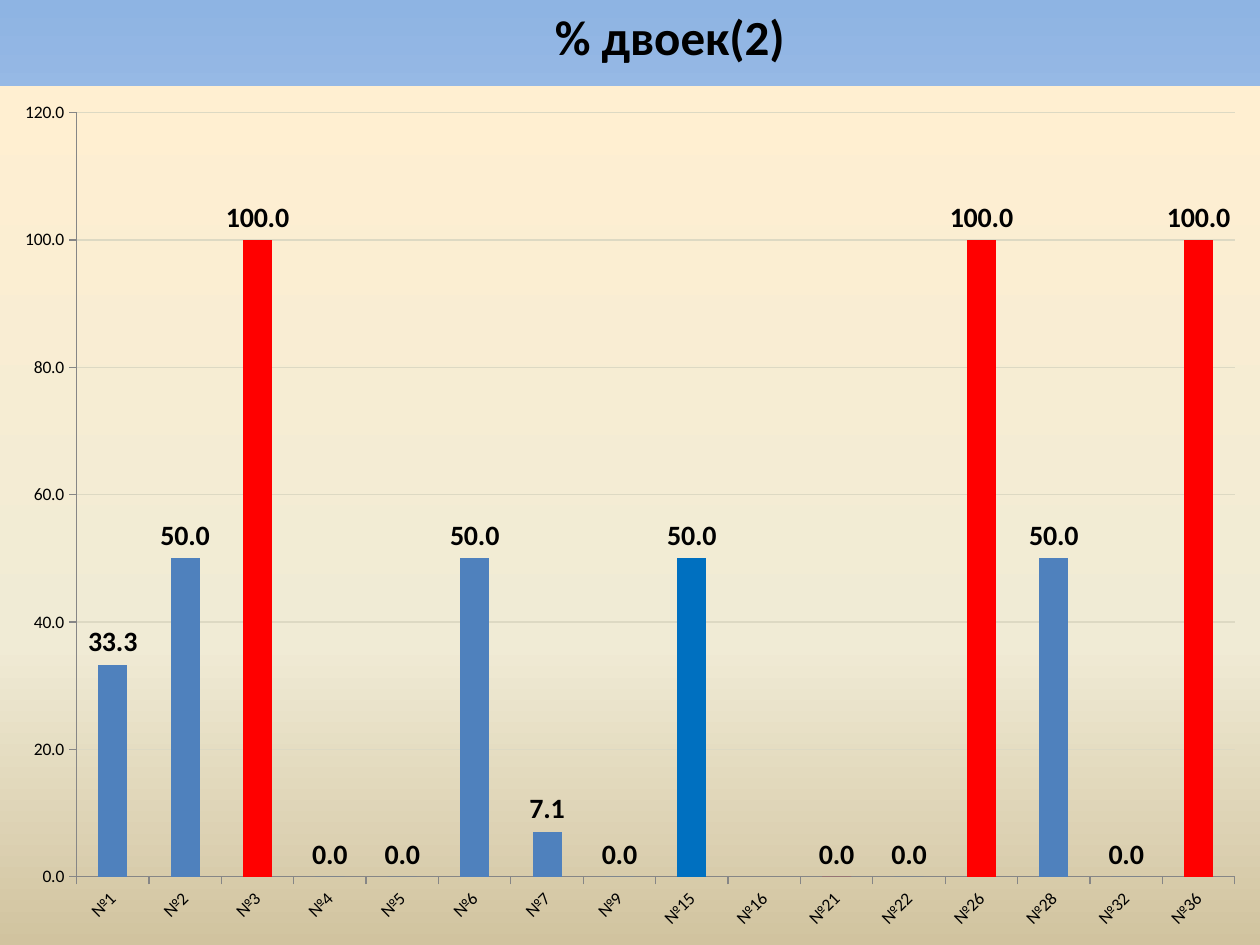
import dataclasses

import lxml.etree
import pptx
import pptx.chart.data
import pptx.dml.color
import pptx.enum.chart
import pptx.enum.text
import pptx.oxml
import pptx.oxml.ns
import pptx.util

Inches = pptx.util.Inches
qn = pptx.oxml.ns.qn
FONT = "Calibri"
BLUE, RED = "4F81BD", "FF0000"


@dataclasses.dataclass
class Bar:
    label: str
    value: float | None
    color: str = BLUE


@dataclasses.dataclass
class Stop:
    percent: int
    color: str


BARS = [
    Bar("№1", 33.3),
    Bar("№2", 50),
    Bar("№3", 100, RED),
    Bar("№4", 0),
    Bar("№5", 0),
    Bar("№6", 50),
    Bar("№7", 7.1),
    Bar("№9", 0, "558ED5"),
    Bar("№15", 50, "0070C0"),
    Bar("№16", None),
    Bar("№21", 0, RED),
    Bar("№22", 0),
    Bar("№26", 100, RED),
    Bar("№28", 50),
    Bar("№32", 0),
    Bar("№36", 100, RED),
]
SKY = [Stop(0, "8EB4E3"), Stop(50, "C2D1ED"), Stop(100, "E1E8F5")]
SAND = [Stop(0, "FFEFD1"), Stop(65, "F0EBD5"), Stop(100, "D1C39F")]


def rgb(color: str) -> pptx.dml.color.RGBColor:
    return pptx.dml.color.RGBColor.from_string(color)


def set_font(font, size: int, bold: bool = False, color: str = "000000") -> None:
    font.name = FONT
    font.size = pptx.util.Pt(size)
    font.bold = bold
    font.color.rgb = rgb(color)


def add_text(tf, text: str, **fmt) -> None:
    r = tf.paragraphs[0].add_run()
    r.text = text
    set_font(r.font, **fmt)


def vertical_gradient(stops: list[Stop]) -> lxml.etree._Element:
    grad = pptx.oxml.parse_xml(
        f'<a:gradFill {pptx.oxml.ns.nsdecls("a")} rotWithShape="1">'
        '<a:gsLst/><a:lin ang="5400000" scaled="0"/></a:gradFill>'
    )
    for stop in stops:
        gs = lxml.etree.SubElement(grad[0], qn("a:gs"), pos=str(stop.percent * 1000))
        lxml.etree.SubElement(gs, qn("a:srgbClr"), val=stop.color)
    return grad


def set_background(s, stops: list[Stop]) -> None:
    s.background.fill.gradient()
    old = next(s.element.iter(qn("a:gradFill")))
    old.getparent().replace(old, vertical_gradient(stops))


def fill_chart_area(chart, stops: list[Stop]) -> None:
    sp_pr = pptx.oxml.parse_xml(f'<c:spPr {pptx.oxml.ns.nsdecls("c", "a")}/>')
    sp_pr.append(vertical_gradient(stops))
    line = lxml.etree.SubElement(sp_pr, qn("a:ln"))
    lxml.etree.SubElement(line, qn("a:noFill"))
    chart.element.find(qn("c:chart")).addnext(sp_pr)


def format_axis(axis) -> None:
    set_font(axis.tick_labels.font, size=10)
    axis.major_tick_mark = pptx.enum.chart.XL_TICK_MARK.OUTSIDE
    axis.minor_tick_mark = pptx.enum.chart.XL_TICK_MARK.NONE
    axis.format.line.color.rgb = rgb("868686")
    axis.format.line.width = pptx.util.Pt(0.75)


def add_bar_chart(s, bars: list[Bar]) -> None:
    data = pptx.chart.data.CategoryChartData(number_format="0.0")
    data.categories = [bar.label for bar in bars]
    data.add_series("Series 1", [bar.value for bar in bars])
    chart = s.shapes.add_chart(
        pptx.enum.chart.XL_CHART_TYPE.COLUMN_CLUSTERED,
        Inches(0), Inches(0.68), Inches(10), Inches(6.82), data,
    ).chart
    chart.has_legend = False
    chart.has_title = False
    set_font(chart.font, size=10)
    fill_chart_area(chart, SAND)

    format_axis(chart.category_axis)
    format_axis(chart.value_axis)
    cat_ax = next(chart.element.iter(qn("c:catAx")))
    next(cat_ax.iter(qn("a:bodyPr"))).set("rot", "-2700000")
    value_axis = chart.value_axis
    value_axis.minimum_scale, value_axis.maximum_scale = 0, 120
    value_axis.major_unit = 20
    value_axis.tick_labels.number_format = "0.0"
    value_axis.tick_labels.number_format_is_linked = False
    grid = value_axis.major_gridlines.format.line
    grid.color.rgb = rgb("DDD9C3")
    grid.width = pptx.util.Pt(0.75)

    plot = chart.plots[0]
    plot.gap_width = 150
    plot.vary_by_categories = False
    series = plot.series[0]
    series.format.fill.solid()
    series.format.fill.fore_color.rgb = rgb(BLUE)
    series.invert_if_negative = False
    for i, bar in enumerate(bars):
        if bar.color != BLUE:
            fill = series.points[i].format.fill
            fill.solid()
            fill.fore_color.rgb = rgb(bar.color)
    labels = series.data_labels
    labels.show_value = True
    labels.number_format = "0.0"
    labels.number_format_is_linked = False
    labels.position = pptx.enum.chart.XL_LABEL_POSITION.OUTSIDE_END
    set_font(labels.font, size=16, bold=True)


def add_title(s, text: str) -> None:
    sp = s.shapes.title
    sp.left, sp.top = Inches(4.29), Inches(0)
    sp.width, sp.height = Inches(2.05), Inches(0.57)
    tf = sp.text_frame
    tf.word_wrap = False
    tf.auto_size = pptx.enum.text.MSO_AUTO_SIZE.SHAPE_TO_FIT_TEXT
    tf.vertical_anchor = pptx.enum.text.MSO_ANCHOR.TOP
    add_text(tf, text, size=28, bold=True)


def main() -> None:
    prs = pptx.Presentation()
    prs.slide_width, prs.slide_height = Inches(10), Inches(7.5)
    s = prs.slides.add_slide(prs.slide_layouts[5])
    set_background(s, SKY)
    add_title(s, "% двоек(2)")
    add_bar_chart(s, BARS)
    prs.save("out.pptx")


if __name__ == "__main__":
    main()
